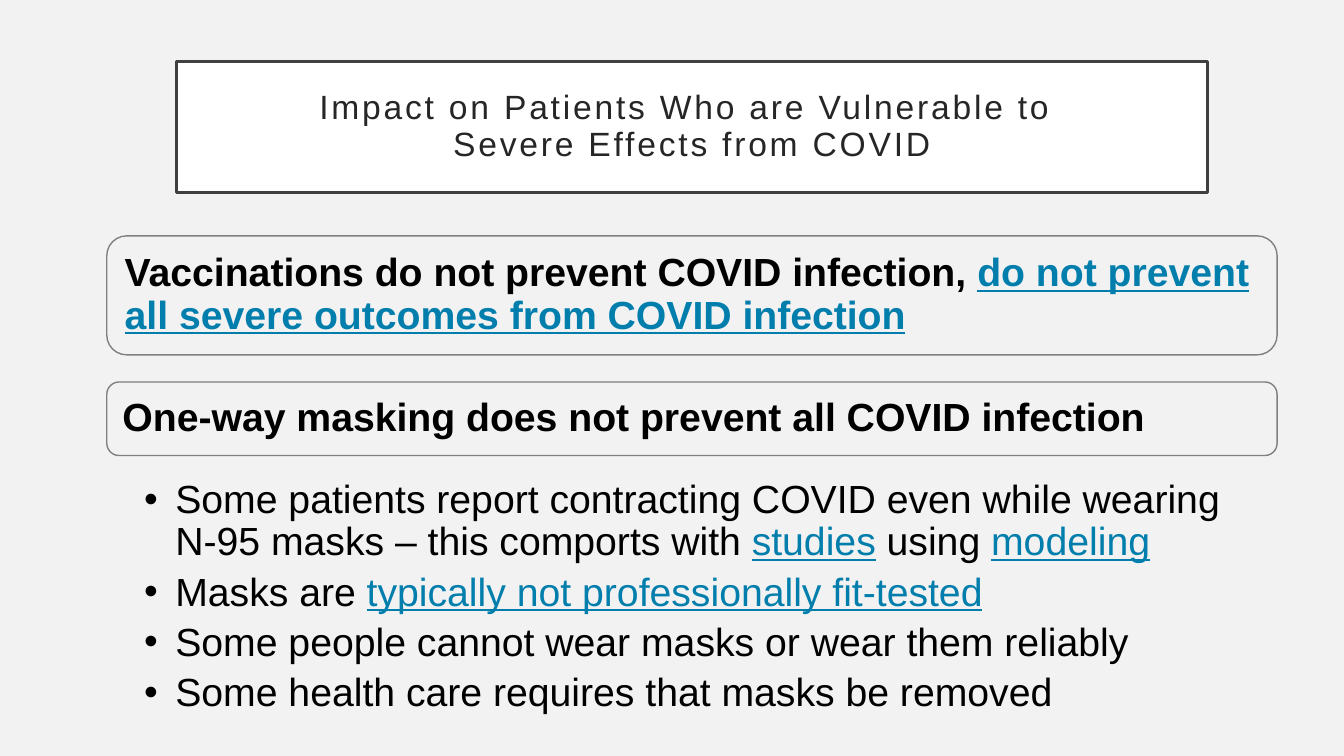
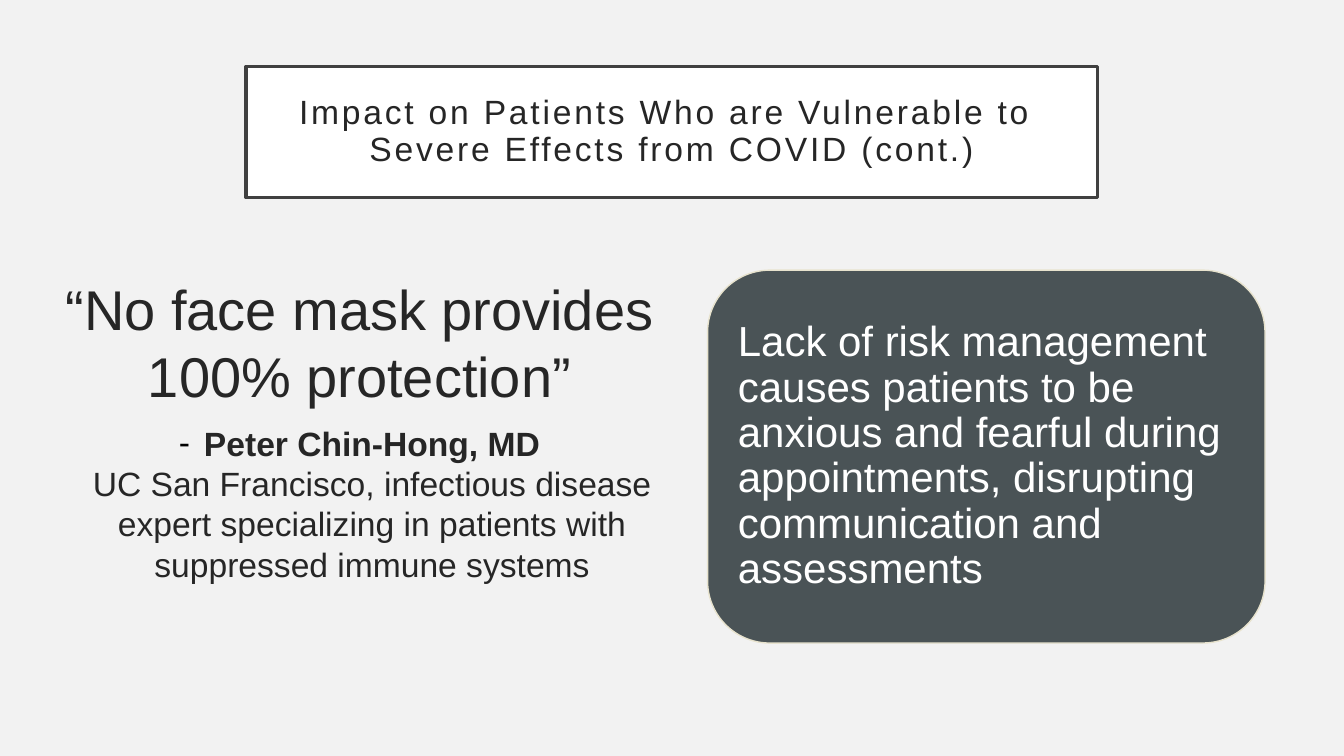
import pptx
import pptx.dml.color
import pptx.enum.shapes
import pptx.enum.text
import pptx.oxml.ns
import pptx.util
import lxml.etree

RGB = pptx.dml.color.RGBColor
KIND = pptx.enum.shapes.MSO_SHAPE
ALIGN = pptx.enum.text.PP_ALIGN
ANCHOR = pptx.enum.text.MSO_ANCHOR
Inches = pptx.util.Inches
Pt = pptx.util.Pt

PAPER = RGB(0xF2, 0xF2, 0xF2)
WHITE = RGB(0xFF, 0xFF, 0xFF)
BLACK = RGB(0, 0, 0)
INK = RGB(0x26, 0x26, 0x26)
FRAME = RGB(0x40, 0x40, 0x40)
GREY = RGB(0x80, 0x80, 0x80)
LINK = RGB(0x02, 0x7E, 0xAD)
SLATE = RGB(0x4A, 0x53, 0x56)
CREAM = RGB(0xE8, 0xE3, 0xCE)

FONT = "Arial"
WIDE, HIGH = Inches(13.333), Inches(7.5)
TIGHT = 0.9


def place(left, top, width, height):
    """Turn percentages of the slide into lengths."""
    shares = (left, WIDE), (top, HIGH), (width, WIDE), (height, HIGH)
    return [int(share * full / 100) for share, full in shares]


def inset(frame, left, top, right, bottom):
    """Set the margins of a text frame in inches and let it wrap."""
    frame.word_wrap = True
    frame.margin_left, frame.margin_top = Inches(left), Inches(top)
    frame.margin_right, frame.margin_bottom = Inches(right), Inches(bottom)


def mark(para, sign, indent):
    """Give a paragraph a black bullet sign with a hanging indent."""
    props = para._p.get_or_add_pPr()
    props.set("marL", str(Inches(indent)))
    props.set("indent", str(-Inches(indent)))
    name = pptx.oxml.ns.qn
    tint = lxml.etree.SubElement(props, name("a:buClr"))
    lxml.etree.SubElement(tint, name("a:srgbClr"), val=str(BLACK))
    lxml.etree.SubElement(props, name("a:buFont"), typeface=FONT)
    lxml.etree.SubElement(props, name("a:buChar"), char=sign)


def write(para, text, size, color, bold=False, track=0):
    """Add one run; link-coloured runs are underlined."""
    run = para.add_run()
    run.text = text
    font = run.font
    font.name, font.size, font.bold = FONT, Pt(size), bold
    font.color.rgb = color
    font.underline = color == LINK
    if track:
        font._element.set("spc", str(track * 100))


def panel(slide, kind, spot, fill, edge, weight, pad, align=ALIGN.LEFT):
    """Draw a framed panel and return its first paragraph."""
    shape = slide.shapes.add_shape(kind, *place(*spot))
    shape.shadow.inherit = False
    shape.fill.solid()
    shape.fill.fore_color.rgb = fill
    shape.line.color.rgb = edge
    shape.line.width = Pt(weight)
    frame = shape.text_frame
    inset(frame, pad, pad, pad, pad)
    frame.vertical_anchor = ANCHOR.MIDDLE
    para = frame.paragraphs[0]
    para.alignment, para.line_spacing = align, TIGHT
    return para


def title(slide, spot, lines):
    """Draw the framed title of a slide."""
    para = panel(slide, KIND.RECTANGLE, spot, WHITE, FRAME, 2.5, 0.2, ALIGN.CENTER)
    for index, line in enumerate(lines):
        if index:
            para.add_line_break()
        write(para, line, 24, INK, track=2)


def card(slide, spot, runs, size, fill=PAPER, edge=GREY, bold=True):
    """Draw a rounded card holding one statement."""
    para = panel(slide, KIND.ROUNDED_RECTANGLE, spot, fill, edge, 1, 0.12)
    for text, color in runs:
        write(para, text, size, color, bold)


def points(slide, spot, items):
    """Draw a bulleted list."""
    frame = slide.shapes.add_textbox(*place(*spot)).text_frame
    inset(frame, 0.37, 0.04, 0.22, 0.04)
    for index, runs in enumerate(items):
        para = frame.add_paragraph() if index else frame.paragraphs[0]
        mark(para, "•", 0.31)
        para.line_spacing, para.space_after = TIGHT, Pt(5.6)
        for text, color in runs:
            write(para, text, 28, color)


def quote(slide, spot, words, name, role):
    """Draw a centred quotation and its speaker."""
    frame = slide.shapes.add_textbox(*place(*spot)).text_frame
    inset(frame, 0.1, 0.05, 0.1, 0.05)
    head = frame.paragraphs[0]
    write(head, words, 40, INK)
    by = frame.add_paragraph()
    mark(by, "-", 0.25)
    by.space_before = Pt(10)
    write(by, name, 24, INK, True)
    by.add_line_break()
    write(by, role, 24, INK)
    head.alignment = by.alignment = ALIGN.CENTER


def main():
    """Build and save the deck."""
    deck = pptx.Presentation()
    deck.slide_width, deck.slide_height = WIDE, HIGH
    back = deck.slide_master.background.fill
    back.solid()
    back.fore_color.rgb = PAPER
    blank = deck.slide_layouts[6]
    topic = "Impact on Patients Who are Vulnerable to "

    risk = deck.slides.add_slide(blank)
    title(risk, (13.13, 8.13, 76.73, 17.33), [topic, "Severe Effects from COVID"])
    left, width = 7.95, 87.08
    card(risk, (left, 31.2, width, 15.73), [
        ("Vaccinations do not prevent COVID infection, ", BLACK),
        ("do not prevent all severe outcomes from COVID infection", LINK)], 28)
    card(risk, (left, 50.53, width, 9.73), [
        ("One-way masking does not prevent all COVID infection", BLACK)], 28)
    points(risk, (left, 62.93, width, 32.4), [
        [("Some patients report contracting COVID even while wearing "
          "N-95 masks – this comports with ", BLACK), ("studies", LINK),
         (" using ", BLACK), ("modeling", LINK)],
        [("Masks are ", BLACK), ("typically not professionally fit-tested", LINK)],
        [("Some people cannot wear masks or wear them reliably", BLACK)],
        [("Some health care requires that masks be removed", BLACK)]])

    care = deck.slides.add_slide(blank)
    title(care, (18.3, 8.8, 63.38, 17.33), [topic, "Severe Effects from COVID (cont.)"])
    card(care, (52.65, 35.73, 41.48, 49.33), [
        ("Lack of risk management causes patients to be anxious and fearful during "
         "appointments, disrupting communication and assessments", WHITE)],
        30, SLATE, CREAM, False)
    quote(care, (3.45, 35.6, 46.58, 52.4), "“No face mask provides 100% protection”",
          "Peter Chin-Hong, MD",
          "UC San Francisco, infectious disease expert specializing in patients "
          "with suppressed immune systems")
    deck.save("out.pptx")


if __name__ == "__main__":
    main()
